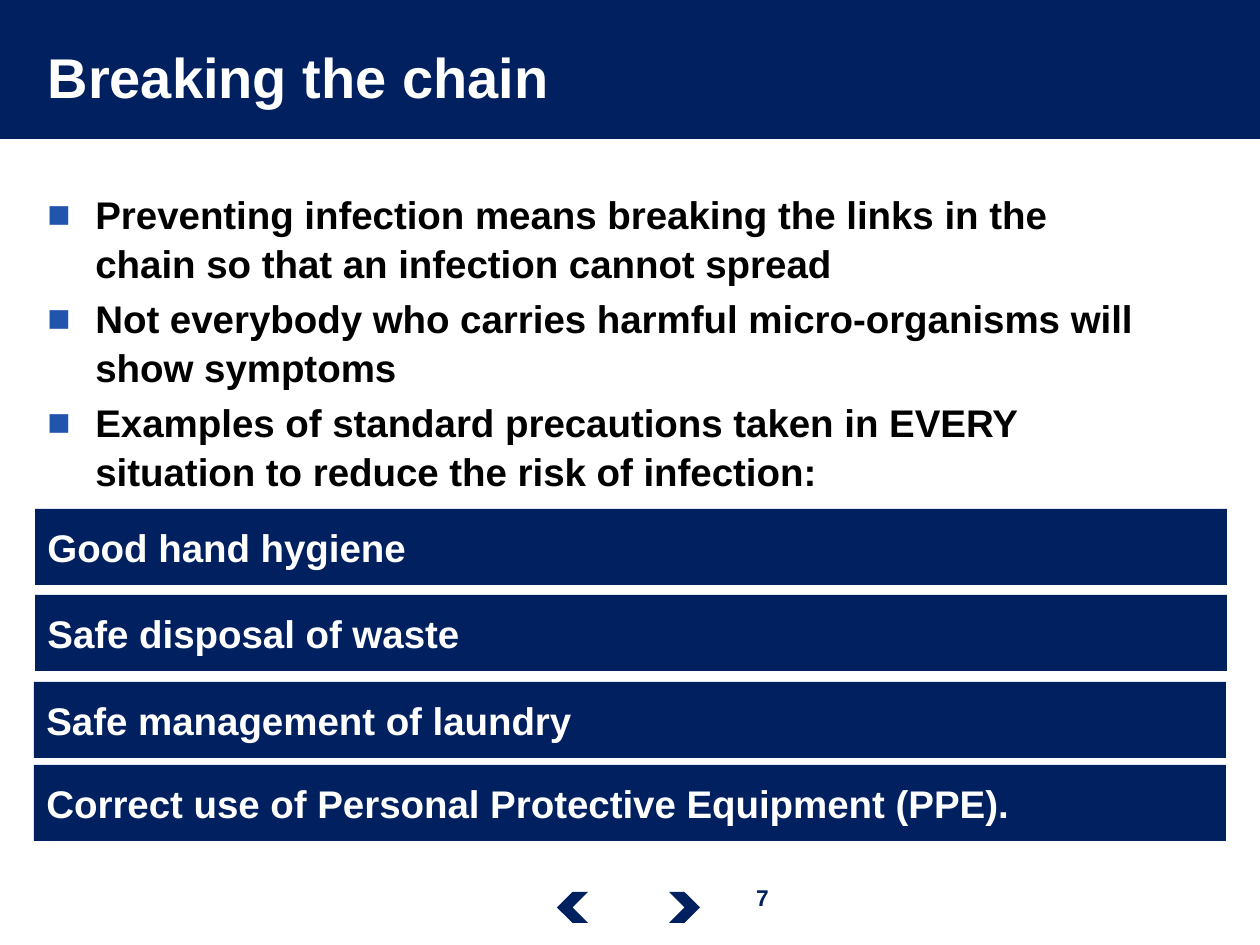
"""Build the "Breaking the chain" slide on infection precautions."""
import dataclasses

import lxml.etree
import pptx
import pptx.dml.color
import pptx.enum.shapes
import pptx.enum.text
import pptx.oxml.ns
import pptx.util

PX = 914400 // 126
SHAPES = pptx.enum.shapes.MSO_SHAPE
ALIGN = pptx.enum.text.PP_ALIGN
ANCHOR = pptx.enum.text.MSO_ANCHOR


@dataclasses.dataclass(frozen=True)
class Theme:
    font: str = "Arial"
    navy: str = "002060"
    bullet: str = "2154AC"
    white: str = "FFFFFF"
    black: str = "000000"
    title_size: int = 32
    body_size: int = 22
    number_size: int = 13


class SlideBuilder:
    def __init__(self, page, theme):
        self.page = page
        self.theme = theme

    def style(self, box, size, color, align=ALIGN.LEFT, anchor=ANCHOR.TOP):
        frame = box.text_frame
        frame.word_wrap = True
        frame.auto_size = pptx.enum.text.MSO_AUTO_SIZE.NONE
        frame.vertical_anchor = anchor
        for para in frame.paragraphs:
            para.alignment = align
            for span in para.runs:
                span.font.name = self.theme.font
                span.font.size = pptx.util.Pt(size)
                span.font.bold = True
                span.font.color.rgb = pptx.dml.color.RGBColor.from_string(color)

    def title(self, text, left, top, width, height):
        box = self.page.shapes.title
        box.left, box.top, box.width, box.height = (n * PX for n in (left, top, width, height))
        box.text_frame.text = text
        self.style(box, self.theme.title_size, self.theme.white, anchor=ANCHOR.MIDDLE)

    def shape(self, kind, left, top, width, height):
        shape = self.page.shapes.add_shape(kind, left * PX, top * PX, width * PX, height * PX)
        shape.shadow.inherit = False
        shape.fill.solid()
        shape.fill.fore_color.rgb = pptx.dml.color.RGBColor.from_string(self.theme.navy)
        shape.line.fill.background()
        return shape

    def banner(self, left, top, width, height):
        banner = self.shape(SHAPES.RECTANGLE, left, top, width, height)
        self.page.shapes.title.element.addprevious(banner.element)

    def bar(self, text, left, top, width, height):
        bar = self.shape(SHAPES.RECTANGLE, left, top, width, height)
        bar.text_frame.text = text
        self.style(bar, self.theme.body_size, self.theme.white, anchor=ANCHOR.MIDDLE)

    def chevron(self, left, top, size, rotation=0):
        self.shape(SHAPES.CHEVRON, left, top, size, size).rotation = rotation

    def text(self, text, left, top, width, height, size, color, align=ALIGN.LEFT):
        box = self.page.shapes.add_textbox(left * PX, top * PX, width * PX, height * PX)
        box.text_frame.text = text
        self.style(box, size, color, align)
        return box

    def bullets(self, items, left, top, width, height, indent):
        box = self.text("\n".join(items), left, top, width, height,
                        self.theme.body_size, self.theme.black)
        for index, para in enumerate(box.text_frame.paragraphs):
            para.line_spacing = 1.05
            para.space_before = pptx.util.Pt(4 if index else 0)
            properties = para._p.get_or_add_pPr()
            properties.set("marL", str(indent * PX))
            properties.set("indent", str(-indent * PX))
            qn = pptx.oxml.ns.qn
            color = lxml.etree.SubElement(properties, qn("a:buClr"))
            lxml.etree.SubElement(color, qn("a:srgbClr"), val=self.theme.bullet)
            lxml.etree.SubElement(properties, qn("a:buFont"), typeface=self.theme.font)
            lxml.etree.SubElement(properties, qn("a:buChar"), char="■")


def main():
    theme = Theme()
    deck = pptx.Presentation()
    deck.slide_width, deck.slide_height = 1260 * PX, 945 * PX
    slide = SlideBuilder(deck.slides.add_slide(deck.slide_layouts[5]), theme)

    slide.banner(-2, 0, 1262, 139)
    slide.title("Breaking the chain", 35, 13, 995, 127)
    slide.bullets([
        "Preventing infection means breaking the links in the chain "
        "so that an infection cannot spread",
        "Not everybody who carries harmful micro-organisms will show symptoms",
        "Examples of standard precautions taken in EVERY situation "
        "to reduce the risk of infection:",
    ], 35, 183, 1134, 320, indent=48)

    precautions = [
        ("Good hand hygiene", 35, 509),
        ("Safe disposal of waste", 35, 595),
        ("Safe management of laundry", 34, 682),
        ("Correct use of Personal Protective Equipment (PPE).", 34, 765),
    ]
    for text, left, top in precautions:
        slide.bar(text, left, top, 1192, 76)

    slide.chevron(557, 892, 31, rotation=180)
    slide.chevron(669, 892, 31)
    slide.text("7", 718, 878, 89, 40, theme.number_size, theme.navy, ALIGN.CENTER)
    deck.save("out.pptx")


if __name__ == "__main__":
    main()
